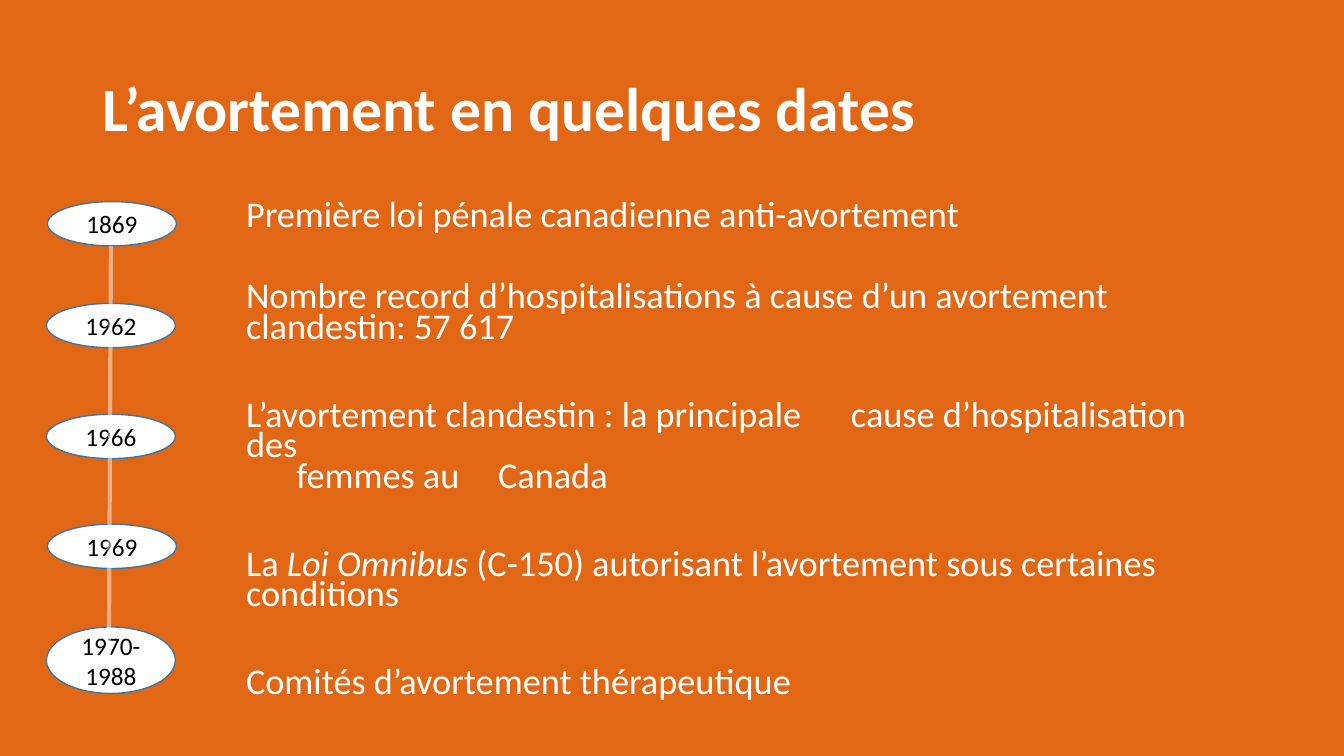
from dataclasses import dataclass

import pptx
import pptx.dml.color
import pptx.enum.shapes
import pptx.enum.text
import pptx.oxml
import pptx.oxml.ns
import pptx.shapes.base
import pptx.slide
import pptx.text.text
import pptx.util

EMU_PER_PX = 9144  # 100 px to the inch


@dataclass(frozen=True)
class Theme:
    font: str = "Calibri"
    background: str = "E26714"
    light: str = "FFFFFF"
    dark: str = "000000"
    outline: str = "43739E"
    title_size: float = 44
    body_size: float = 25.9
    year_size: float = 18


@dataclass(frozen=True)
class Box:
    left: int
    top: int
    width: int
    height: int


@dataclass(frozen=True)
class Event:
    """One date; every second span of its text is italic."""
    year: str
    oval: Box
    spans: tuple[str, ...]
    space_before: int = 41
    line_spacing: float = 0.7
    tab_stops: tuple[int, ...] = ()


THEME = Theme()
TITLE_BOX = Box(92, 38, 1150, 145)
BODY_BOX = Box(234, 200, 1008, 518)
EVENTS = (
    Event("1869", Box(47, 200, 128, 44),
          ("Première loi pénale canadienne anti-avortement",),
          space_before=10, line_spacing=0.6),
    Event("1962", Box(46, 301, 128, 44),
          ("Nombre record d’hospitalisations à cause d’un avortement clandestin: 57 617",),
          space_before=37),
    Event("1966", Box(46, 411, 128, 44),
          ("L’avortement clandestin : la principale \tcause d’hospitalisation des"
           "\v\tfemmes au \tCanada",),
          tab_stops=(146, 333, 568)),
    Event("1969", Box(47, 520, 128, 44),
          ("La ", "Loi Omnibus ", "(C-150) autorisant l’avortement sous certaines conditions")),
    Event("1970-1988", Box(46, 622, 128, 66),
          ("Comités d’avortement thérapeutique",)),
)


def px(length: int) -> pptx.util.Emu:
    return pptx.util.Emu(length * EMU_PER_PX)


def rgb(code: str) -> pptx.dml.color.RGBColor:
    return pptx.dml.color.RGBColor.from_string(code)


def place(shape: pptx.shapes.base.BaseShape, box: Box) -> None:
    shape.left, shape.top = px(box.left), px(box.top)
    shape.width, shape.height = px(box.width), px(box.height)


def format_runs(para: pptx.text.text._Paragraph, size: float, color: str) -> None:
    for span in para.runs:
        span.font.name = THEME.font
        span.font.size = pptx.util.Pt(size)
        span.font.color.rgb = rgb(color)


def fill_title(page: pptx.slide.Slide) -> None:
    title = page.shapes.title
    place(title, TITLE_BOX)
    frame = title.text_frame
    frame.text = "L’avortement en quelques dates"
    frame.auto_size = pptx.enum.text.MSO_AUTO_SIZE.NONE
    frame.vertical_anchor = pptx.enum.text.MSO_ANCHOR.MIDDLE
    para = frame.paragraphs[0]
    para.alignment = pptx.enum.text.PP_ALIGN.LEFT
    para.line_spacing = 0.9
    format_runs(para, THEME.title_size, THEME.light)
    para.runs[0].font.bold = True


def remove_bullet(para: pptx.text.text._Paragraph, tab_stops: tuple[int, ...]) -> None:
    """Clear bullet and indent, and set the tab stops."""
    properties = para._p.get_or_add_pPr()
    properties.set("marL", "0")
    properties.set("indent", "0")
    pptx.oxml.ns.qn("a:buNone")
    properties.append(pptx.oxml.parse_xml(f"<a:buNone {pptx.oxml.ns.nsdecls('a')}/>"))
    if tab_stops:
        stops = "".join(f'<a:tab pos="{px(stop)}" algn="l"/>' for stop in tab_stops)
        properties.append(pptx.oxml.parse_xml(
            f"<a:tabLst {pptx.oxml.ns.nsdecls('a')}>{stops}</a:tabLst>"))


def fill_body(page: pptx.slide.Slide) -> None:
    body = page.placeholders[1]
    place(body, BODY_BOX)
    frame = body.text_frame
    frame.auto_size = pptx.enum.text.MSO_AUTO_SIZE.NONE
    for index, event in enumerate(EVENTS):
        para = frame.add_paragraph() if index else frame.paragraphs[0]
        para.text = event.spans[0]
        for text in event.spans[1:]:
            para.add_run().text = text
        para.line_spacing = event.line_spacing
        para.space_before = pptx.util.Pt(event.space_before)
        remove_bullet(para, event.tab_stops)
        format_runs(para, THEME.body_size, THEME.light)
        for span in para.runs[1::2] if len(event.spans) > 1 else ():
            span.font.italic = True


def add_year(page: pptx.slide.Slide, event: Event) -> None:
    box = event.oval
    oval = page.shapes.add_shape(pptx.enum.shapes.MSO_SHAPE.OVAL, px(box.left),
                                 px(box.top), px(box.width), px(box.height))
    oval.shadow.inherit = False
    oval.fill.solid()
    oval.fill.fore_color.rgb = rgb(THEME.light)
    oval.line.color.rgb = rgb(THEME.outline)
    oval.line.width = pptx.util.Pt(1)
    frame = oval.text_frame
    frame.text = event.year
    frame.word_wrap = True
    frame.vertical_anchor = pptx.enum.text.MSO_ANCHOR.MIDDLE
    para = frame.paragraphs[0]
    para.alignment = pptx.enum.text.PP_ALIGN.CENTER
    format_runs(para, THEME.year_size, THEME.dark)


def add_timeline(page: pptx.slide.Slide) -> None:
    """Draw the half-transparent line that runs through the years."""
    line = page.shapes.add_connector(pptx.enum.shapes.MSO_CONNECTOR.STRAIGHT,
                                     px(110), px(244), px(108), px(652))
    line.line.color.rgb = rgb(THEME.light)
    line.line.width = pptx.util.Pt(3)
    namespace = pptx.oxml.ns.nsdecls("a")
    color = line._element.spPr.find(".//" + pptx.oxml.ns.qn("a:srgbClr"))
    color.append(pptx.oxml.parse_xml(f'<a:alpha {namespace} val="48000"/>'))
    line._element.spPr.append(pptx.oxml.parse_xml(f"<a:effectLst {namespace}/>"))


def main() -> None:
    deck = pptx.Presentation()
    deck.slide_width, deck.slide_height = px(1333), px(750)
    page = deck.slides.add_slide(deck.slide_layouts[1])
    page.background.fill.solid()
    page.background.fill.fore_color.rgb = rgb(THEME.background)
    fill_title(page)
    fill_body(page)
    for event in EVENTS:
        add_year(page, event)
    add_timeline(page)
    deck.save("out.pptx")


if __name__ == "__main__":
    main()
